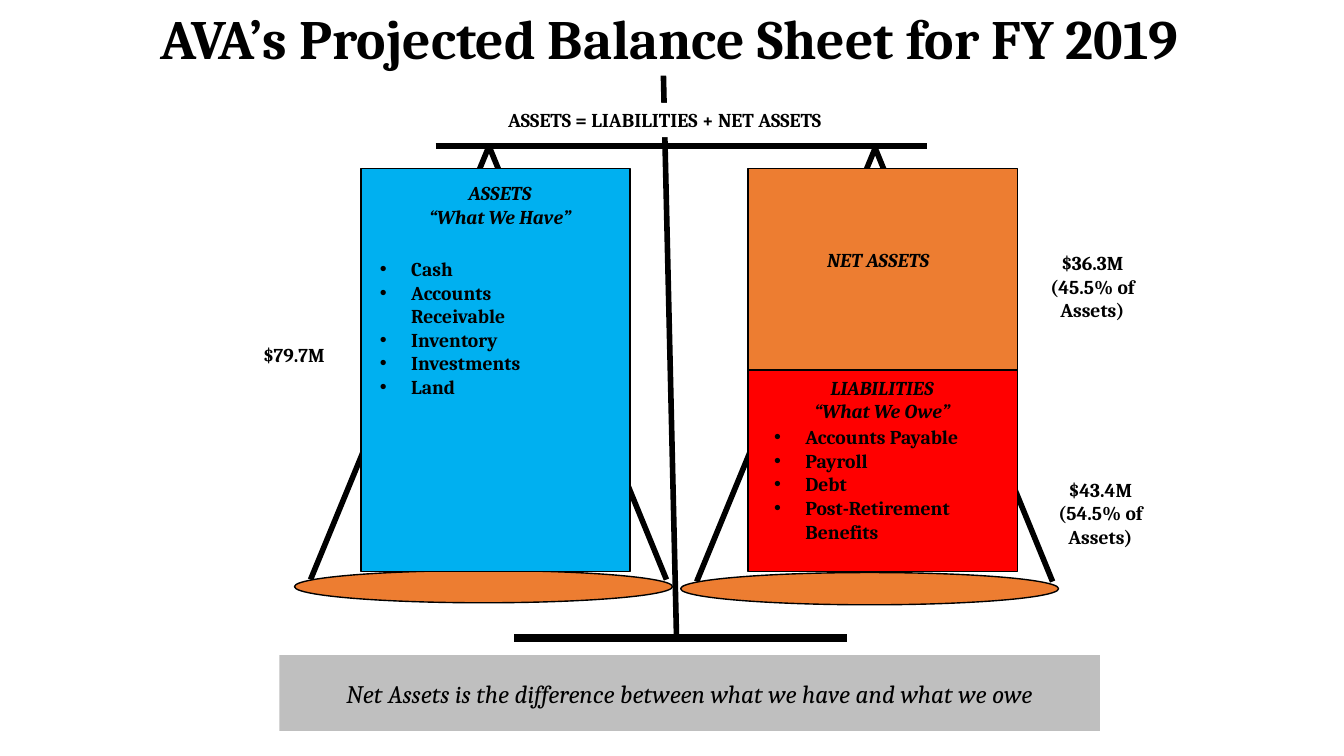
from dataclasses import dataclass

from lxml.etree import SubElement
from pptx import Presentation
from pptx.dml.color import RGBColor
from pptx.enum.shapes import MSO_CONNECTOR, MSO_SHAPE
from pptx.enum.text import MSO_ANCHOR, PP_ALIGN
from pptx.oxml.ns import qn
from pptx.util import Inches, Pt


@dataclass(frozen=True)
class Theme:
    font: str = "Cambria"
    ink: str = "000000"
    paper: str = "FFFFFF"
    banner: str = "BFBFBF"
    assets: str = "00B0F0"
    net: str = "ED7D31"
    owed: str = "FF0000"
    title_size: float = 39.6
    banner_size: float = 18
    body_size: float = 14
    outline: float = 1
    beam: float = 4
    base: float = 6


THEME = Theme()
BOLD = {"bold": True}
HEADING = {"bold": True, "italic": True}
BULLET_INDENT = Inches(0.31)
BLOCK_WIDTH = 2.67
TEXT_WIDTH = 2.08


def rgb(value):
    return RGBColor.from_string(value)


def write(frame, lines, size=THEME.body_size, style=BOLD, bullets=False,
          spacing=None, middle=False, inset=None):
    """Fill a text frame with one paragraph per line."""
    frame.word_wrap = True
    frame.vertical_anchor = MSO_ANCHOR.MIDDLE if middle else MSO_ANCHOR.TOP
    if inset is not None:
        for side in ("left", "top", "right", "bottom"):
            setattr(frame, f"margin_{side}", Inches(inset))
    for number, line in enumerate(lines):
        paragraph = frame.add_paragraph() if number else frame.paragraphs[0]
        paragraph.alignment = PP_ALIGN.LEFT if bullets else PP_ALIGN.CENTER
        if spacing:
            paragraph.line_spacing = spacing
        if bullets:
            add_bullet(paragraph)
        run = paragraph.add_run()
        run.text = line
        run.font.color.rgb = rgb(THEME.ink)
        font_values = {"name": THEME.font, "size": Pt(size), **style}
        for name, value in font_values.items():
            setattr(run.font, name, value)


def add_bullet(paragraph):
    properties = paragraph._p.get_or_add_pPr()
    properties.set("marL", str(BULLET_INDENT))
    properties.set("indent", str(-BULLET_INDENT))
    SubElement(properties, qn("a:buFont")).set("typeface", "Arial")
    SubElement(properties, qn("a:buChar")).set("char", "•")


def add_label(slide, box, lines, **text_format):
    label = slide.shapes.add_textbox(*map(Inches, box))
    write(label.text_frame, lines, **text_format)


def add_block(slide, kind, box, fill, outlined=True):
    block = slide.shapes.add_shape(kind, *map(Inches, box))
    block.shadow.inherit = False
    block.fill.solid()
    block.fill.fore_color.rgb = rgb(fill)
    if outlined:
        block.line.color.rgb = rgb(THEME.ink)
        block.line.width = Pt(THEME.outline)
    else:
        block.line.fill.background()
    return block


def add_bar(slide, start, end, width=THEME.beam):
    bar = slide.shapes.add_connector(
        MSO_CONNECTOR.STRAIGHT, *map(Inches, (*start, *end)))
    bar.line.color.rgb = rgb(THEME.ink)
    bar.line.width = Pt(width)
    SubElement(bar._element.spPr, qn("a:effectLst"))


def add_pan(slide, left, top):
    """Hang a pan from two arms that meet on the beam."""
    apex = (left + 1.93, top - 4.21)
    for arm_offset in (0.16, 3.69):
        add_bar(slide, apex, (left + arm_offset, top + 0.09))
    add_block(slide, MSO_SHAPE.OVAL, (left, top, 3.75, 0.32), THEME.net)


def add_load(slide, left, top, height, fill):
    add_block(slide, MSO_SHAPE.RECTANGLE,
              (left, top, BLOCK_WIDTH, height), fill)


def main():
    presentation = Presentation()
    presentation.slide_width = Inches(13.33)
    presentation.slide_height = Inches(7.5)
    slide = presentation.slides.add_slide(presentation.slide_layouts[6])

    # Closing statement
    banner = add_block(slide, MSO_SHAPE.RECTANGLE, (2.77, 6.5, 8.14, 0.75),
                       THEME.banner, outlined=False)
    write(banner.text_frame,
          ["Net Assets is the difference between what we have and what we owe"],
          size=THEME.banner_size, style={"italic": True}, middle=True, inset=0)

    # Amounts beside the scale
    amounts = [
        ((10.25, 2.44, 1.17, 0.81), ["$36.3M", "(45.5% of Assets)"]),
        ((10.33, 4.69, 1.17, 0.81), ["$43.4M", "(54.5% of Assets)"]),
        ((2.33, 3.35, 1.17, 0.57), ["$79.7M"]),
    ]
    for box, lines in amounts:
        add_label(slide, box, lines)

    # Scale: beam, post, base and pans
    add_bar(slide, (4.32, 1.45), (9.19, 1.45))
    add_bar(slide, (6.58, 0.75), (6.71, 6.33))
    add_bar(slide, (5.1, 6.33), (8.4, 6.33), THEME.base)
    add_pan(slide, 2.92, 5.66)
    add_pan(slide, 6.75, 5.68)

    # Left load: assets
    add_load(slide, 3.58, 1.67, 4, THEME.assets)
    add_label(slide, (3.92, 1.75, TEXT_WIDTH, 0.57),
              ["ASSETS", "“What We Have”"], style=HEADING)
    add_label(slide, (3.67, 2.5, TEXT_WIDTH, 1.51),
              ["Cash", "Accounts Receivable", "Inventory", "Investments",
               "Land"], bullets=True)

    # Right load: net assets on top of liabilities
    add_load(slide, 7.42, 3.67, 2, THEME.owed)
    add_load(slide, 7.42, 1.67, 2, THEME.net)
    add_label(slide, (7.71, 3.68, TEXT_WIDTH, 0.57),
              ["LIABILITIES", "“What We Owe”"], style=HEADING)
    add_label(slide, (7.58, 4.17, TEXT_WIDTH, 1.28),
              ["Accounts Payable", "Payroll", "Debt",
               "Post-Retirement Benefits"], bullets=True)
    add_label(slide, (7.67, 2.41, TEXT_WIDTH, 0.34), ["NET ASSETS"],
              style=HEADING)

    # Equation and title
    equation = add_block(slide, MSO_SHAPE.RECTANGLE, (3.26, 1.02, 6.67, 0.34),
                         THEME.paper, outlined=False)
    write(equation.text_frame, ["ASSETS = LIABILITIES + NET ASSETS"])
    add_label(slide, (0.89, 0.14, 11.5, 0.55),
              ["AVA’s Projected Balance Sheet for FY 2019"],
              size=THEME.title_size, spacing=0.9, middle=True)

    presentation.save("out.pptx")


if __name__ == "__main__":
    main()
